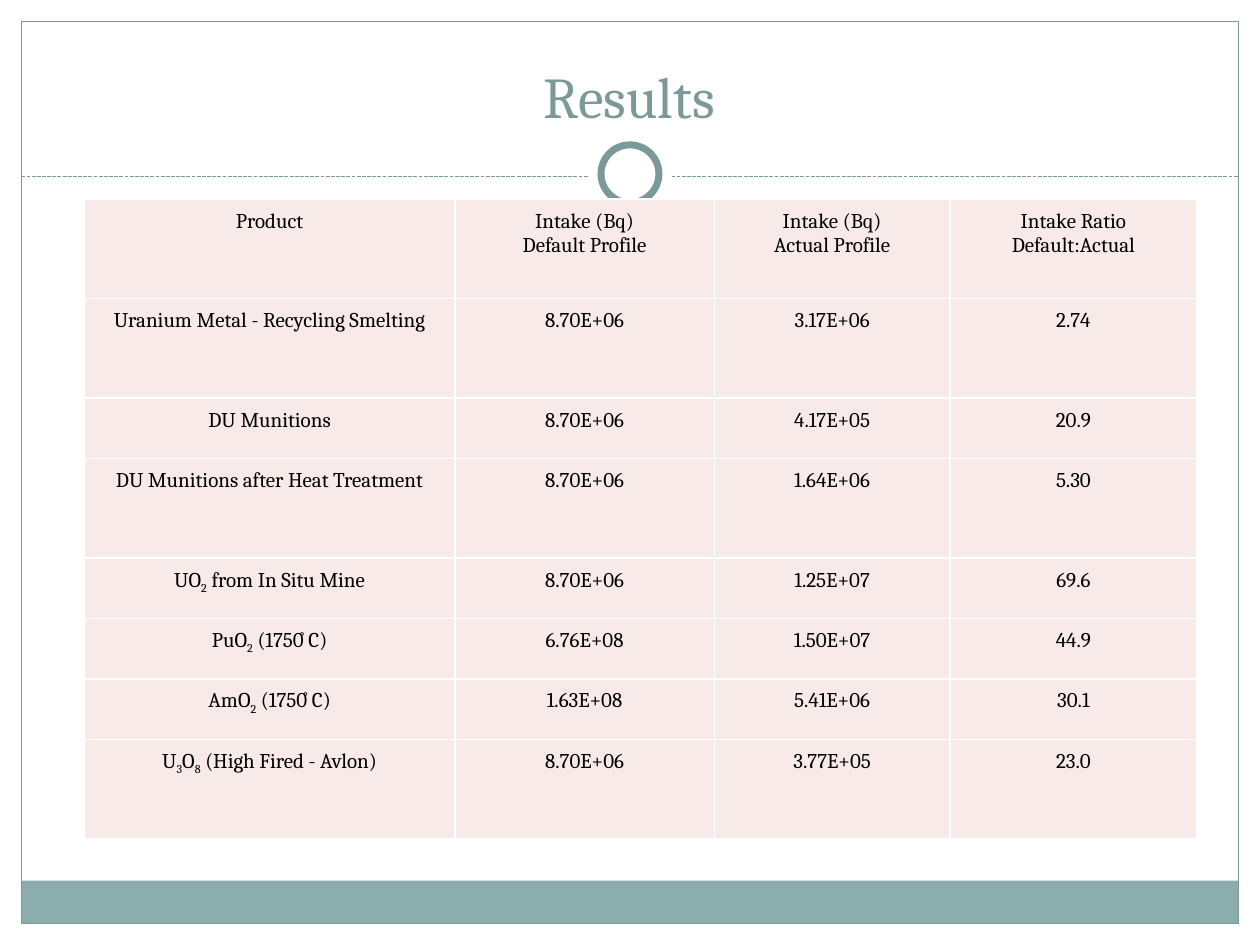
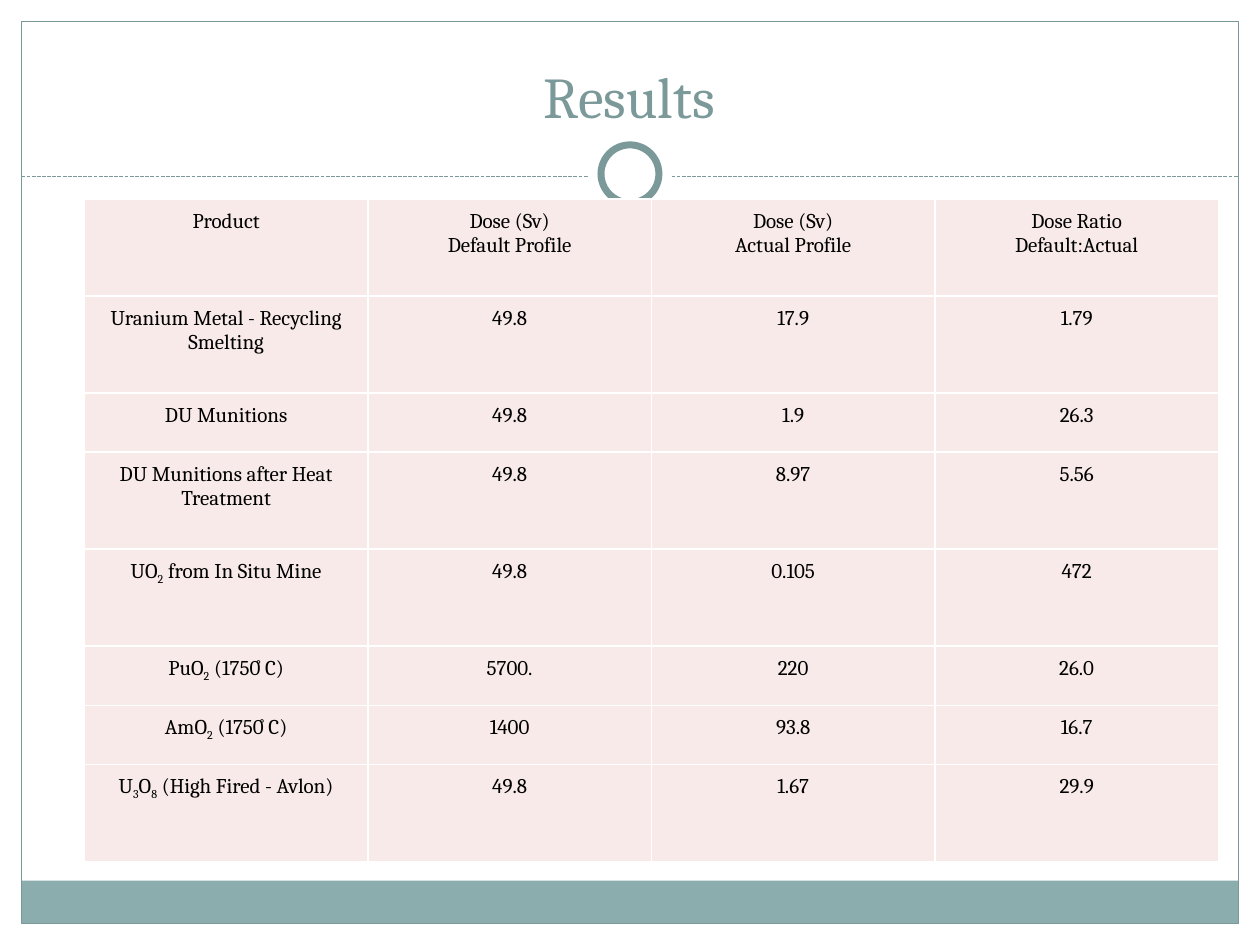
from lxml.etree import SubElement
from pptx import Presentation
from pptx.dml.color import RGBColor as RGB
from pptx.enum.dml import MSO_LINE as Dash
from pptx.enum.shapes import MSO_CONNECTOR as Conn, MSO_SHAPE as Shape
from pptx.enum.text import MSO_ANCHOR as Anchor, MSO_AUTO_SIZE as Fit, PP_ALIGN as Align
from pptx.oxml.ns import qn
from pptx.util import Emu, Inches, Pt

COLORS = {"white": "FFFFFF", "band": "8CADAE", "trim": "7C999A",
          "cell": "F7EAE9", "text": "000000"}
FONT = "Cambria"
WIDE, HIGH, EDGE = 10, 7.5, 0.17

# Text between bars is set as a subscript.
PRODUCTS = ["Uranium Metal - Recycling Smelting", "DU Munitions",
            "DU Munitions after Heat Treatment", "UO|2| from In Situ Mine",
            "PuO|2| (1750̊ C)", "AmO|2| (1750̊ C)", "U|3|O|8| (High Fired - Avlon)"]

INTAKE = {
    "name": "Intake", "unit": "Bq",
    "default": ["8.70E+06"] * 4 + ["6.76E+08", "1.63E+08", "8.70E+06"],
    "actual": ["3.17E+06", "4.17E+05", "1.64E+06", "1.25E+07",
               "1.50E+07", "5.41E+06", "3.77E+05"],
    "ratio": ["2.74", "20.9", "5.30", "69.6", "44.9", "30.1", "23.0"],
    "cols": [2.94, 2.06, 1.87, 1.96], "tall": 0.79, "short": 0.48, "low": {2, 4, 5, 6},
}
DOSE = {
    "name": "Dose", "unit": "Sv",
    "default": ["49.8"] * 4 + ["5700.", "1400", "49.8"],
    "actual": ["17.9", "1.9", "8.97", "0.105", "220", "93.8", "1.67"],
    "ratio": ["1.79", "26.3", "5.56", "472", "26.0", "16.7", "29.9"],
    "cols": [2.25] * 4, "tall": 0.77, "short": 0.47, "low": {2, 5, 6},
}


def tint(name):
    return RGB.from_string(COLORS[name])


def style(run, size, color):
    font = run.font
    font.name, font.size, font.bold = FONT, Pt(size), False
    font.color.rgb = tint(color)


def draw(slide, kind, box, fill=None, line=None, width=0.75):
    shape = slide.shapes.add_shape(kind, *map(Inches, box))
    shape.shadow.inherit = False
    if fill:
        shape.fill.solid()
        shape.fill.fore_color.rgb = tint(fill)
    else:
        shape.fill.background()
    if line:
        shape.line.color.rgb = tint(line)
        shape.line.width = Pt(width)
    else:
        shape.line.fill.background()


def add_rule(slide, left, right, top):
    rule = slide.shapes.add_connector(
        Conn.STRAIGHT, *map(Inches, (left, top, right, top)))
    rule.line.color.rgb = tint("trim")
    rule.line.width = Pt(0.75)
    rule.line.dash_style = Dash.SQUARE_DOT
    SubElement(rule._element.spPr, qn("a:effectLst"))


def add_ring(slide, mid, top):
    """Draw a ring on a white disc that interrupts the rule."""
    for size, line in ((0.67, None), (0.46, "trim")):
        box = (mid - size / 2, top - size / 2, size, size)
        draw(slide, Shape.OVAL, box, "white", line, 4)


def add_frame(slide, box):
    left, top, width, height = box
    band = 0.34
    draw(slide, Shape.RECTANGLE, (left, top + height - band, width, band), "band")
    draw(slide, Shape.RECTANGLE, box, line="trim")
    add_rule(slide, left, left + width, top + 1.23)
    add_ring(slide, left + width / 2, top + 1.21)


def set_title(slide, text, box):
    title = slide.shapes.title
    title.left, title.top, title.width, title.height = map(Inches, box)
    frame = title.text_frame
    frame.text = text
    frame.auto_size = Fit.NONE
    frame.vertical_anchor = Anchor.BOTTOM
    frame.paragraphs[0].alignment = Align.CENTER
    style(frame.paragraphs[0].runs[0], 33, "trim")


def add_border(cell):
    props = cell._tc.get_or_add_tcPr()
    for side in "LRTB":
        line = SubElement(props, qn(f"a:ln{side}"), w=str(Pt(1)))
        fill = SubElement(line, qn("a:solidFill"))
        SubElement(fill, qn("a:srgbClr"), val=COLORS["white"])


def fill_cell(cell, text):
    add_border(cell)
    cell.fill.solid()
    cell.fill.fore_color.rgb = tint("cell")
    cell.margin_left = cell.margin_right = cell.margin_top = Inches(0.08)
    cell.margin_bottom = Inches(0.04)
    cell.text_frame.text = text.replace("|", "")
    for para, line in zip(cell.text_frame.paragraphs, text.split("\n")):
        para.alignment = Align.CENTER
        parts = line.split("|")
        para.runs[0].text = parts[0]
        for part in parts[1:]:
            para.add_run().text = part
        for i, run in enumerate(para.runs):
            style(run, 12, "text")
            if i % 2:
                run._r.get_or_add_rPr().set("baseline", "-25000")


def add_grid(slide, data, left, top):
    name, unit = data["name"], data["unit"]
    head = ("Product", f"{name} ({unit})\nDefault Profile",
            f"{name} ({unit})\nActual Profile", f"{name} Ratio\nDefault:Actual")
    rows = [head, *zip(PRODUCTS, data["default"], data["actual"], data["ratio"])]
    cols = [Inches(w) for w in data["cols"]]
    highs = [Inches(data["short" if i in data["low"] else "tall"])
             for i in range(len(rows))]
    table = slide.shapes.add_table(len(rows), len(cols), Inches(left), Inches(top),
                                   Emu(sum(cols)), Emu(sum(highs))).table
    table.first_row = table.horz_banding = False
    for col, width in zip(table.columns, cols):
        col.width = width
    for row, high, texts in zip(table.rows, highs, rows):
        row.height = high
        for cell, text in zip(row.cells, texts):
            fill_cell(cell, text)


def add_results(deck, data):
    slide = deck.slides.add_slide(deck.slide_layouts[5])
    slide.background.fill.solid()
    slide.background.fill.fore_color.rgb = tint("white")
    add_frame(slide, (EDGE, EDGE, WIDE - 2 * EDGE, HIGH - 2 * EDGE))
    set_title(slide, "Results", (0.33, 0.25, 9.33, 0.83))
    add_grid(slide, data, 0.67, 1.58)


def main():
    deck = Presentation()
    deck.slide_width, deck.slide_height = Inches(WIDE), Inches(HIGH)
    for data in (INTAKE, DOSE):
        add_results(deck, data)
    deck.save("out.pptx")


if __name__ == "__main__":
    main()
